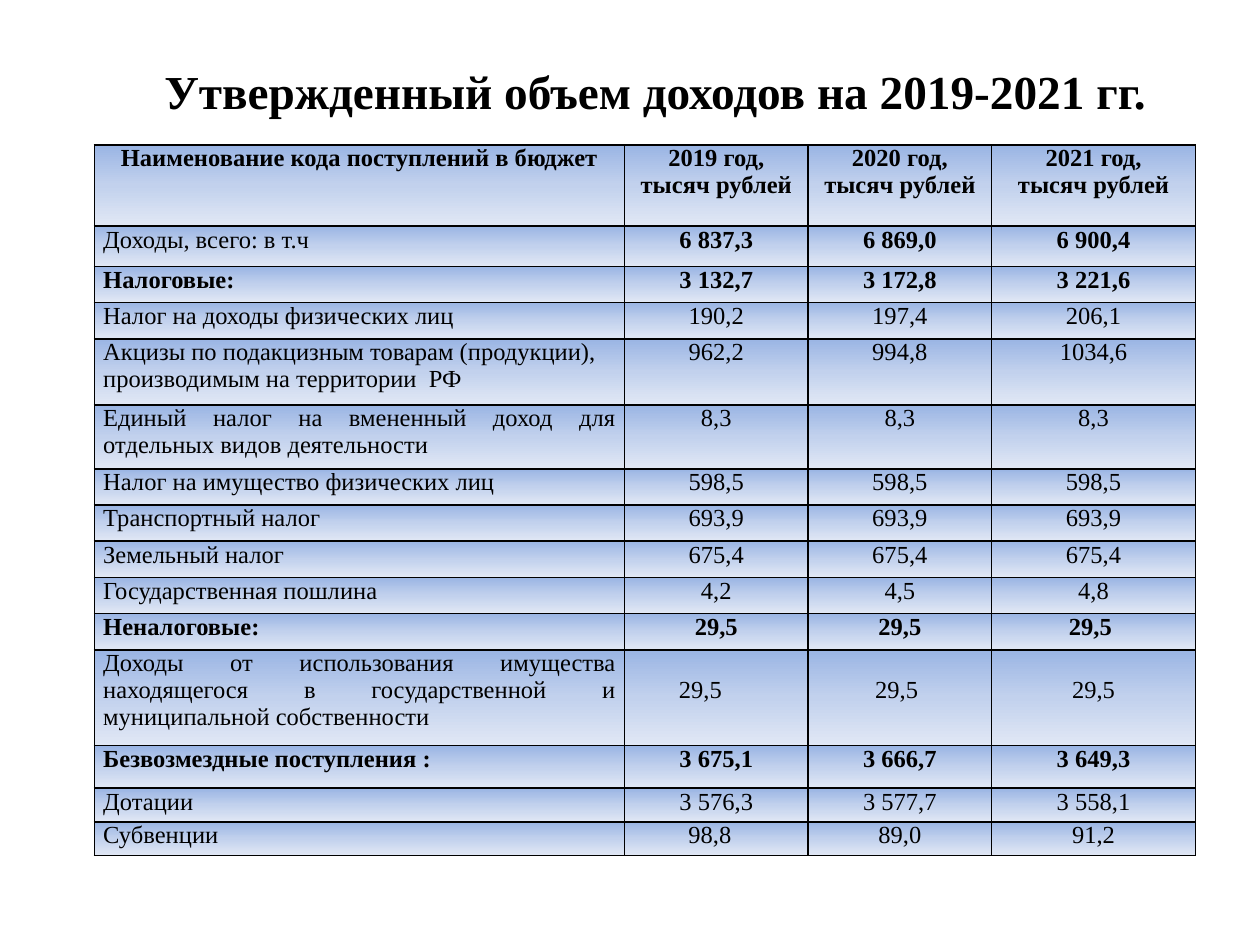
from lxml.etree import SubElement
from pptx import Presentation
from pptx.dml.color import RGBColor
from pptx.enum.text import MSO_ANCHOR, PP_ALIGN
from pptx.oxml.ns import qn
from pptx.util import Cm, Pt

FONT = "Times New Roman"
COLORS = {"ink": "000000", "top": "9AB5E4", "mid": "C2D1ED", "low": "E1E8F5"}
STOPS = [(0, "top"), (50, "mid"), (100, "low")]

TITLE = "Утвержденный объем доходов на 2019-2021 гг."
HEAD = ["Наименование кода поступлений в бюджет"] + [
    f"{year} год,\vтысяч рублей" for year in (2019, 2020, 2021)]
# Row height in cm, name, one value per year
ROWS = [
    (0.81, "Доходы, всего: в т.ч", "6 837,3", "6 869,0", "6 900,4"),
    (0.73, "Налоговые:", "3 132,7", "3 172,8", "3 221,6"),
    (0.73, "Налог на доходы физических лиц", "190,2", "197,4", "206,1"),
    (1.33, "Акцизы по подакцизным товарам (продукции), производимым на территории  РФ",
     "962,2", "994,8", "1034,6"),
    (1.29, "Единый налог на вмененный доход для отдельных видов деятельности",
     "8,3", "8,3", "8,3"),
    (0.73, "Налог на имущество физических лиц", "598,5", "598,5", "598,5"),
    (0.73, "Транспортный налог", "693,9", "693,9", "693,9"),
    (0.73, "Земельный налог", "675,4", "675,4", "675,4"),
    (0.73, "Государственная пошлина", "4,2", "4,5", "4,8"),
    (0.73, "Неналоговые:", "29,5", "29,5", "29,5"),
    (1.93, "Доходы от использования имущества находящегося в государственной и "
     "муниципальной собственности", "29,5", "29,5", "29,5"),
    (0.86, "Безвозмездные поступления :", "3 675,1", "3 666,7", "3 649,3"),
    (0.68, "Дотации", "3 576,3", "3 577,7", "3 558,1"),
    (0.68, "Субвенции", "98,8", "89,0", "91,2"),
]
WIDTHS = [10.69, 3.7, 3.7, 4.11]
HEAD_HEIGHT = 1.64
TOTAL, EXCISE, PROPERTY = 1, 4, 11
GROUPS = {2, 10, 12}
# Extra right inset in cm for values that sit left of centre
SHIFTS = {(10, 3): 0.13, (11, 1): 0.64, (11, 2): 0.13, (14, 1): 0.26}


def write(frame, text, size=14, bold=False, align=PP_ALIGN.CENTER):
    frame.text = text
    frame.word_wrap = True
    para = frame.paragraphs[0]
    para.alignment = align
    for run in para.runs:
        font = run.font
        font.name, font.size, font.bold = FONT, Pt(size), bold
        font.color.rgb = RGBColor.from_string(COLORS["ink"])


def add_color(parent, name):
    return SubElement(parent, qn("a:srgbClr"), val=COLORS[name])


def dress(cell):
    """Give a cell black borders and a top-down gradient."""
    props = cell._tc.get_or_add_tcPr()
    for side in ("lnL", "lnR", "lnT", "lnB"):
        line = SubElement(props, qn(f"a:{side}"), w=str(Pt(1)))
        add_color(SubElement(line, qn("a:solidFill")), "ink")
    grad = SubElement(props, qn("a:gradFill"), rotWithShape="1")
    stops = SubElement(grad, qn("a:gsLst"))
    for place, name in STOPS:
        add_color(SubElement(stops, qn("a:gs"), pos=str(place * 1000)), name)
    SubElement(grad, qn("a:lin"), ang="5400000", scaled="0")


def style(row, col):
    """Return the bold flag and the alignment of a table cell."""
    bold = row == 0 or row in GROUPS or (row == TOTAL and col > 0)
    if row == 0 or col > 0:
        return bold, PP_ALIGN.CENTER
    return bold, PP_ALIGN.LEFT if row == EXCISE else PP_ALIGN.JUSTIFY


def add_title(slide):
    title = slide.shapes.title
    title.left, title.top = Cm(2.69), Cm(1.12)
    title.width, title.height = Cm(21.03), Cm(1.4)
    write(title.text_frame, TITLE, size=27, bold=True)
    title.text_frame.vertical_anchor = MSO_ANCHOR.MIDDLE


def add_budget(slide):
    lines = [(HEAD_HEIGHT, *HEAD)] + ROWS
    heights = [line[0] for line in lines]
    table = slide.shapes.add_table(
        len(lines), len(WIDTHS), Cm(1.9), Cm(2.92),
        Cm(sum(WIDTHS)), Cm(sum(heights))).table
    table.first_row = table.horz_banding = False
    for column, width in zip(table.columns, WIDTHS):
        column.width = Cm(width)
    for row, (height, *texts) in enumerate(lines):
        table.rows[row].height = Cm(height)
        for col, text in enumerate(texts):
            cell = table.cell(row, col)
            bold, align = style(row, col)
            write(cell.text_frame, text, bold=bold, align=align)
            cell.margin_left = Cm(0.18)
            cell.margin_right = Cm(0.18 + SHIFTS.get((row, col), 0))
            cell.margin_top = Cm(0.54 if row == PROPERTY and col else 0)
            cell.margin_bottom = 0
            dress(cell)


def main():
    deck = Presentation()
    deck.slide_width, deck.slide_height = Cm(25.4), Cm(19.05)
    slide = deck.slides.add_slide(deck.slide_layouts[5])
    add_title(slide)
    add_budget(slide)
    deck.save("out.pptx")


if __name__ == "__main__":
    main()
